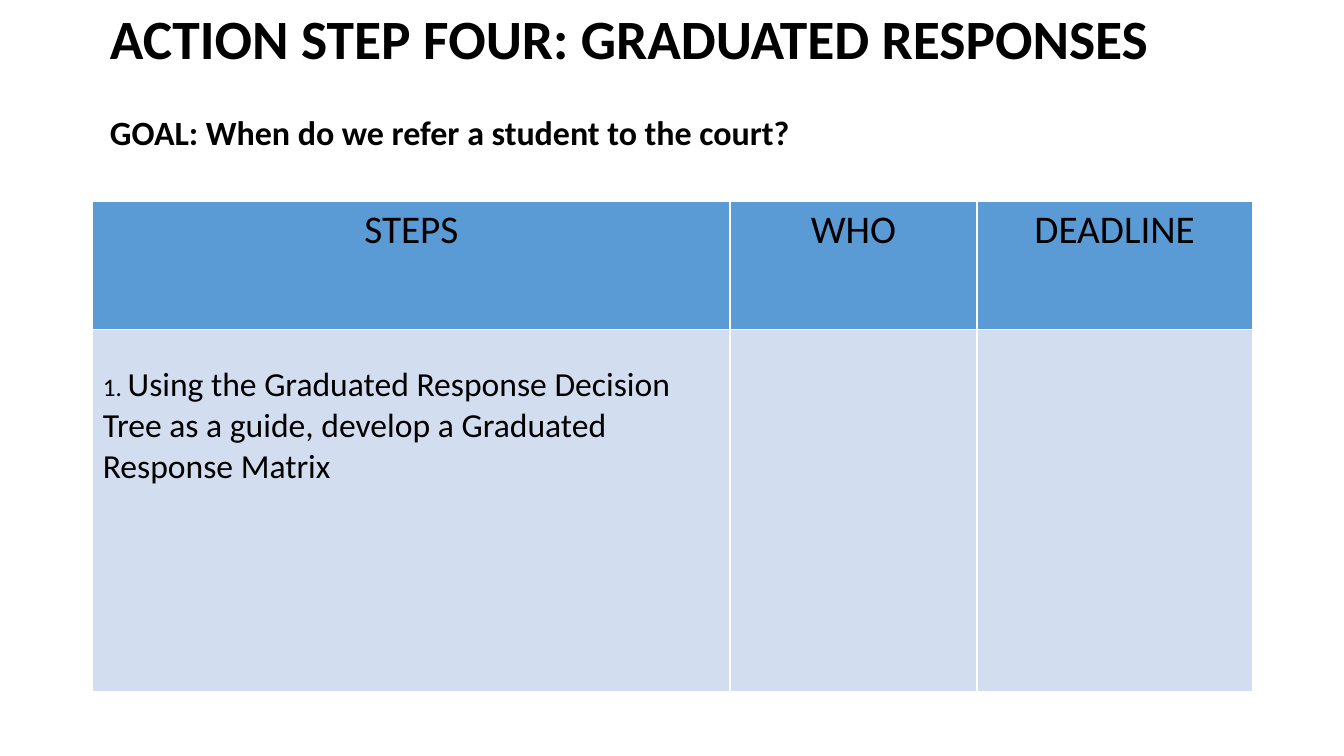
from lxml import etree
from pptx import Presentation
from pptx.dml.color import RGBColor
from pptx.enum.text import MSO_ANCHOR, MSO_AUTO_SIZE, PP_ALIGN
from pptx.oxml.ns import qn
from pptx.util import Inches, Pt

LEFT, CENTER = PP_ALIGN.LEFT, PP_ALIGN.CENTER
MIDDLE, NO_FIT = MSO_ANCHOR.MIDDLE, MSO_AUTO_SIZE.NONE
FONT = "Calibri"
COLORS = {"text": "000000", "head": "5B9BD5", "body": "D2DEEF", "line": "FFFFFF"}

TITLE = "ACTION STEP FOUR: GRADUATED RESPONSES"
GOAL = "GOAL: When do we refer a student to the court?"
HEADS = ["STEPS", "WHO", "DEADLINE"]
STEP = [
    ("1. ", 18),
    ("Using the Graduated Response Decision Tree as a guide, "
     "develop a Graduated Response Matrix", 24),
]
WIDTHS = [6.32, 2.45, 2.73]
HEIGHTS = [1.27, 3.59]


def write(para, text, size, bold=False, align=LEFT):
    para.alignment = align
    run = para.add_run()
    run.text = text
    font = run.font
    font.name, font.size, font.bold = FONT, Pt(size), bold
    font.color.rgb = RGBColor.from_string(COLORS["text"])


def paint(cell, fill):
    """Give a cell its fill and thin borders."""
    props = cell._tc.get_or_add_tcPr()
    for side in ("a:lnL", "a:lnR", "a:lnT", "a:lnB"):
        line = etree.SubElement(props, qn(side), w=str(Pt(1)))
        solid = etree.SubElement(line, qn("a:solidFill"))
        etree.SubElement(solid, qn("a:srgbClr"), val=COLORS["line"])
    cell.fill.solid()
    cell.fill.fore_color.rgb = RGBColor.from_string(COLORS[fill])


def add_title(slide):
    title = slide.shapes.title
    title.left, title.top = Inches(0.99), Inches(0.26)
    title.width, title.height = Inches(11.5), Inches(1.45)
    frame = title.text_frame
    frame.word_wrap, frame.auto_size = True, NO_FIT
    frame.vertical_anchor = MIDDLE
    frame.margin_top, frame.margin_bottom = 0, Inches(0.33)
    head = frame.paragraphs[0]
    write(head, TITLE, 39.6, bold=True)
    goal = frame.add_paragraph()
    write(goal, GOAL, 24.3, bold=True)
    goal.space_before = Pt(32)
    for para in (head, goal):
        para.line_spacing = 0.9


def add_steps(slide):
    """Add the table of steps, people and deadlines."""
    table = slide.shapes.add_table(
        len(HEIGHTS), len(WIDTHS), Inches(0.92), Inches(2),
        Inches(sum(WIDTHS)), Inches(sum(HEIGHTS))).table
    for row, height in zip(table.rows, HEIGHTS):
        row.height = Inches(height)
    for col, width in enumerate(WIDTHS):
        table.columns[col].width = Inches(width)
        head = table.cell(0, col)
        paint(head, "head")
        write(head.text_frame.paragraphs[0], HEADS[col], 28, align=CENTER)
        paint(table.cell(1, col), "body")
    first = table.cell(1, 0)
    first.margin_top = Inches(0.35)
    for text, size in STEP:
        write(first.text_frame.paragraphs[0], text, size)


def main():
    deck = Presentation()
    deck.slide_width, deck.slide_height = Inches(13.33), Inches(7.5)
    slide = deck.slides.add_slide(deck.slide_layouts[5])
    add_title(slide)
    add_steps(slide)
    deck.save("out.pptx")


if __name__ == "__main__":
    main()
